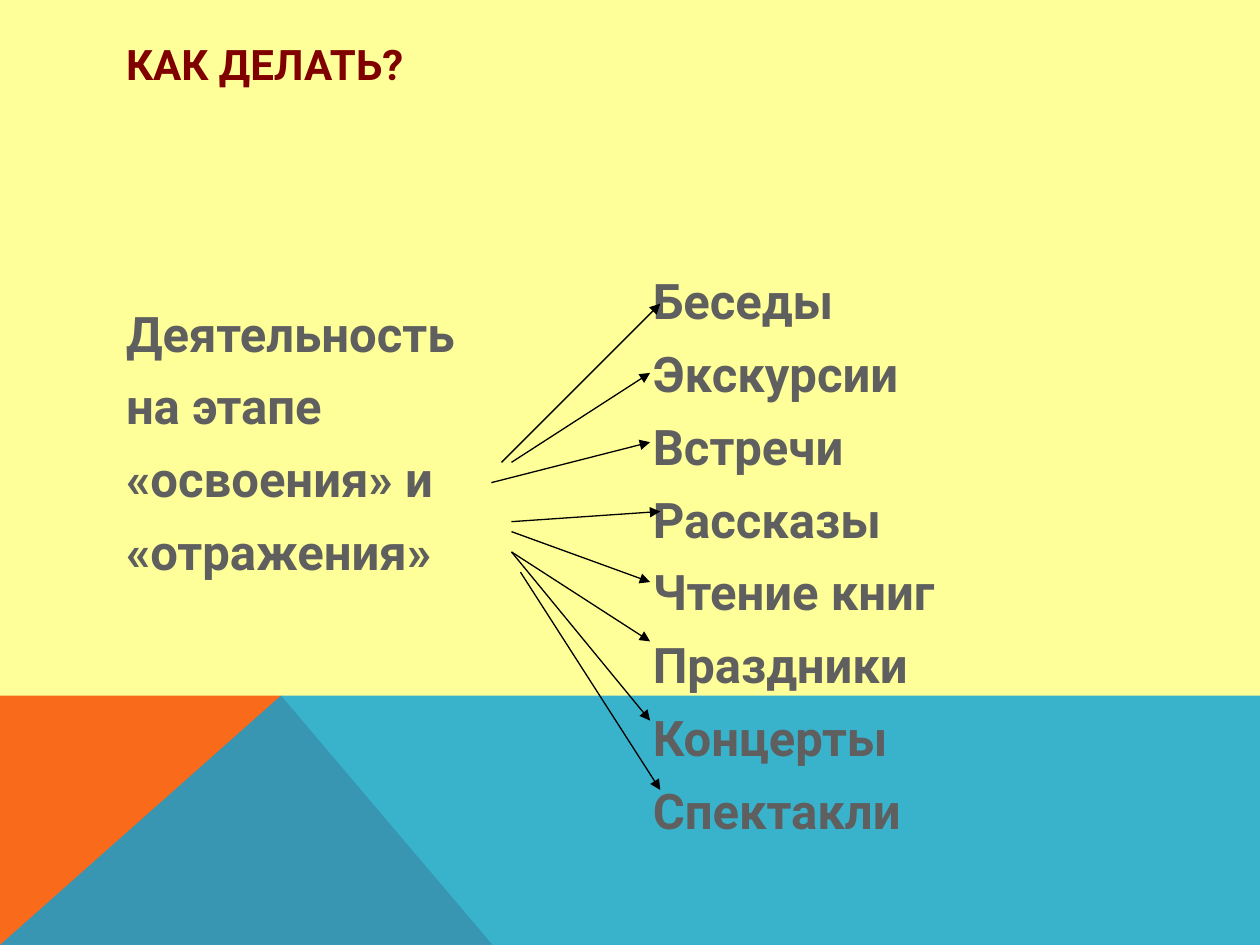
from dataclasses import dataclass

from lxml.etree import SubElement
from pptx import Presentation
from pptx.dml.color import RGBColor
from pptx.enum.shapes import MSO_CONNECTOR
from pptx.enum.text import MSO_ANCHOR, MSO_AUTO_SIZE, PP_ALIGN
from pptx.oxml.ns import qn
from pptx.util import Pt


@dataclass(frozen=True)
class Theme:
    """Colours, font and type sizes of the slide."""
    font: str = "Roboto"
    background: str = "FFFF99"
    title: str = "800000"
    body: str = "5F5F5F"
    orange: str = "F96A1B"
    blue: str = "08A1D9"
    line: str = "000000"
    title_size: float = 24
    body_size: float = 28
    line_pitch: float = 33.6
    space_before: float = 8
    line_width: float = 0.75


THEME = Theme()
STAGE = ["Деятельность", "на этапе", "«освоения» и", "«отражения»"]
ACTIVITIES = ["Беседы", "Экскурсии", "Встречи", "Рассказы",
              "Чтение книг", "Праздники", "Концерты", "Спектакли"]
ARROWS = [
    ((5.8, 90.7), (96.5, 0)), ((11.5, 90.7), (90.7, 39.6)),
    ((0, 102.3), (90.7, 79.2)), ((11.5, 124.6), (96.5, 118.8)),
    ((11.5, 130.3), (90.7, 159.1)), ((11.5, 141.9), (90.7, 193)),
    ((11.5, 141.9), (90.7, 238.3)), ((16.6, 153.4), (96.5, 277.9)),
]


def apply(obj, **values):
    """Set each named value as an attribute of the object."""
    for name, value in values.items():
        setattr(obj, name, value)


def color(code):
    """Turn a hex code into a colour."""
    return RGBColor.from_string(code)


def place(sp, box):
    """Move a shape to a box of left, top, width and height in points."""
    apply(sp, **dict(zip(("left", "top", "width", "height"), map(Pt, box))))


def write(tf, lines, size, code, **paragraph):
    """Write lines as bold paragraphs in one format."""
    apply(tf, word_wrap=True, auto_size=MSO_AUTO_SIZE.NONE)
    for i, line in enumerate(lines):
        p = tf.add_paragraph() if i else tf.paragraphs[0]
        apply(p, alignment=PP_ALIGN.LEFT, **paragraph)
        r = p.add_run()
        r.text = line
        apply(r.font, name=THEME.font, size=Pt(size), bold=True)
        r.font.color.rgb = color(code)


def add_title(sp, box, text):
    """Fill the title placeholder, with the line in the upper part."""
    place(sp, box)
    apply(sp.text_frame, vertical_anchor=MSO_ANCHOR.MIDDLE,
          margin_top=0, margin_bottom=Pt(28))
    write(sp.text_frame, [text], THEME.title_size, THEME.title)


def add_list(sp, box, lines, skipped=0):
    """Fill a body placeholder, starting below a number of skipped lines."""
    place(sp, box)
    tf = sp.text_frame
    pitch = THEME.line_pitch + THEME.space_before
    apply(tf, vertical_anchor=MSO_ANCHOR.TOP,
          margin_top=Pt(3.6 + skipped * pitch))
    write(tf, lines, THEME.body_size, THEME.body,
          line_spacing=Pt(THEME.line_pitch),
          space_before=Pt(THEME.space_before), space_after=Pt(0))
    for p in tf.paragraphs:
        pPr = p._p.get_or_add_pPr()
        pPr.set("marL", str(Pt(27)))
        pPr.set("indent", str(Pt(-27)))
        SubElement(pPr, qn("a:buNone"))


def add_polygon(s, points, code, alpha=100):
    """Draw a filled polygon behind the text."""
    builder = s.shapes.build_freeform(*map(Pt, points[0]), scale=1.0)
    builder.add_line_segments([(Pt(x), Pt(y)) for x, y in points[1:]])
    sp = builder.convert_to_shape()
    sp.shadow.inherit = False
    sp.line.fill.background()
    sp.fill.solid()
    sp.fill.fore_color.rgb = color(code)
    if alpha < 100:
        clr = sp._element.spPr.find(f".//{qn('a:srgbClr')}")
        SubElement(clr, qn("a:alpha"), val=str(alpha * 1000))
    return sp


def add_footer(s, box):
    """Draw the orange corner and the translucent blue band."""
    x, y, w, h = box
    right, bottom, peak = x + w, y + h, x + 160.6
    corner = add_polygon(s, [(x, bottom), (x, y), (peak, y),
                             (x + 281.5, bottom)], THEME.orange)
    band = add_polygon(s, [(x, bottom), (peak, y), (right, y),
                           (right, bottom)], THEME.blue, 80)
    for i, sp in enumerate((corner, band)):
        s.shapes._spTree.insert(2 + i, sp._element)


def add_arrows(s, box, arrows):
    """Draw the fan of arrows from the stage to the activities."""
    x, y = box[:2]
    for (x1, y1), (x2, y2) in arrows:
        c = s.shapes.add_connector(MSO_CONNECTOR.STRAIGHT, Pt(x + x1),
                                   Pt(y + y1), Pt(x + x2), Pt(y + y2))
        c.line.width = Pt(THEME.line_width)
        c.line.color.rgb = color(THEME.line)
        SubElement(c.line._get_or_add_ln(), qn("a:tailEnd"), type="triangle")
        SubElement(c._element.spPr, qn("a:effectLst"))


def main():
    """Build the slide and save it."""
    prs = Presentation()
    apply(prs, slide_width=Pt(720), slide_height=Pt(540))
    s = prs.slides.add_slide(prs.slide_layouts[3])
    s.background.fill.solid()
    s.background.fill.fore_color.rgb = color(THEME.background)
    title, stage, activities = s.placeholders
    add_footer(s, (0, 397.5, 720, 142.5))
    add_list(stage, (64.8, 86.4, 252, 292.3), STAGE, skipped=2)
    add_list(activities, (365.8, 151.2, 318.2, 324), ACTIVITIES)
    add_title(title, (64.8, 28.8, 591.8, 43.2), "КАК ДЕЛАТЬ?")
    add_arrows(s, (280.8, 173.5, 96.5, 277.9), ARROWS)
    prs.save("out.pptx")


if __name__ == "__main__":
    main()
